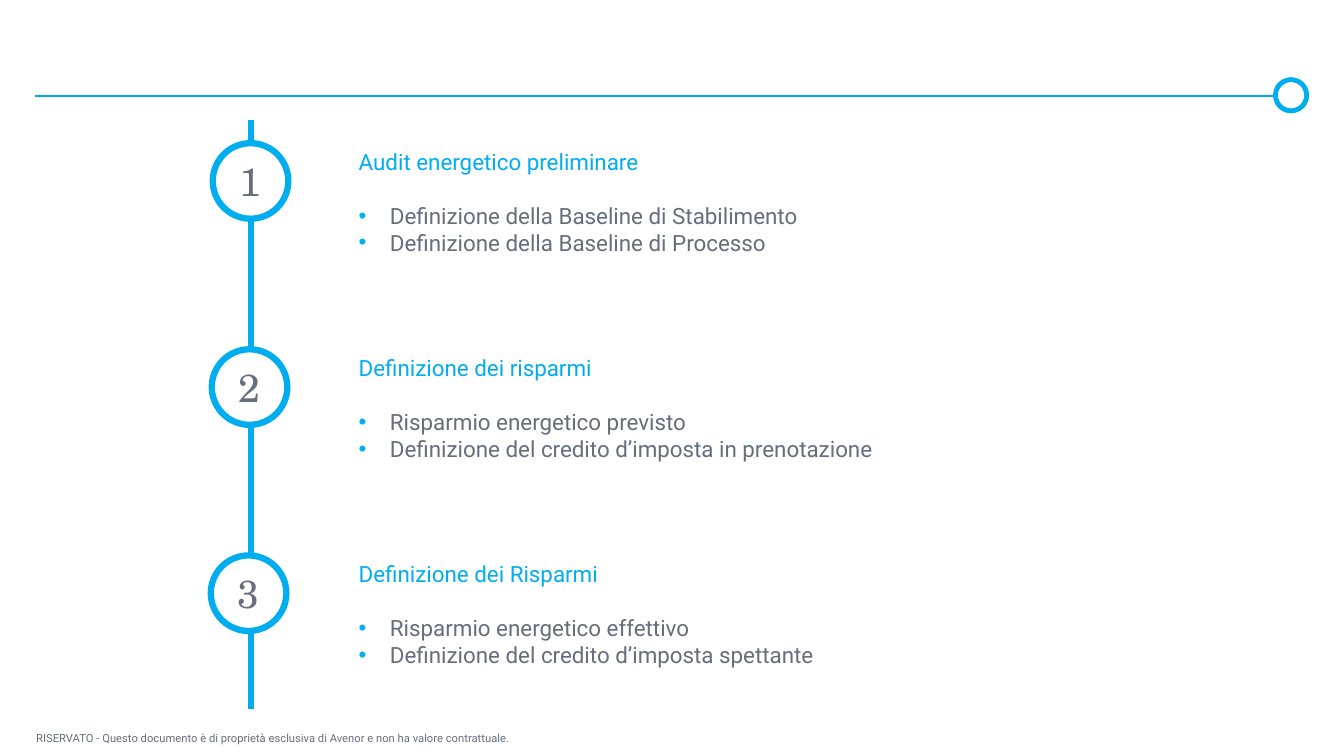
from dataclasses import dataclass

from lxml.etree import SubElement
from pptx import Presentation
from pptx.dml.color import RGBColor
from pptx.enum.shapes import MSO_CONNECTOR as CONN, MSO_SHAPE as SHAPE
from pptx.enum.text import MSO_ANCHOR as ANCHOR, MSO_AUTO_SIZE as AUTO, PP_ALIGN as ALIGN
from pptx.oxml.ns import qn
from pptx.shapes.autoshape import Shape
from pptx.slide import Slide
from pptx.text.text import TextFrame, _Paragraph as Paragraph
from pptx.util import Inches, Pt


@dataclass(frozen=True)
class Theme:
    blue: str = "00AEEF"
    bullet: str = "00B0F0"
    grey: str = "666E7E"
    white: str = "FFFFFF"
    font: str = "Roboto"
    number_font: str = "TeX Gyre Schola"
    body: float = 16
    number: float = 28
    footer: float = 8
    rule: float = 1.5
    ring: float = 3.5
    timeline: float = 4.5
    heading_gap: float = 19.3


@dataclass(frozen=True)
class Step:
    title: str
    points: tuple[str, ...]


THEME = Theme()
STEPS = (
    Step("Audit energetico preliminare",
         ("Definizione della Baseline di Stabilimento",
          "Definizione della Baseline di Processo")),
    Step("Definizione dei risparmi",
         ("Risparmio energetico previsto",
          "Definizione del credito d’imposta in prenotazione")),
    Step("Definizione dei Risparmi",
         ("Risparmio energetico effettivo",
          "Definizione del credito d’imposta spettante")),
)
FOOTER = ("RISERVATO - Questo documento è di proprietà esclusiva di Avenor "
          "e non ha valore contrattuale.")
STEP_TOP = 1.42
STEP_PITCH = 2.045
CIRCLE_LEFT = 2.11
CIRCLE_SHIFT = 0.01
CIRCLE_SIZE = 0.75


def rgb(color: str) -> RGBColor:
    return RGBColor.from_string(color)


def add_run(p: Paragraph, text: str, size: float, color: str,
            font: str = THEME.font) -> None:
    r = p.add_run()
    r.text = text
    r.font.name = font
    r.font.size = Pt(size)
    r.font.color.rgb = rgb(color)


def add_line(s: Slide, x1: float, y1: float, x2: float, y2: float,
             width: float) -> None:
    line = s.shapes.add_connector(
        CONN.STRAIGHT, Inches(x1), Inches(y1), Inches(x2), Inches(y2))
    line.line.color.rgb = rgb(THEME.blue)
    line.line.width = Pt(width)
    SubElement(line._element.spPr, qn("a:effectLst"))


def add_circle(s: Slide, x: float, y: float, size: float, width: float) -> Shape:
    sp = s.shapes.add_shape(
        SHAPE.OVAL, Inches(x), Inches(y), Inches(size), Inches(size))
    sp.shadow.inherit = False
    sp.fill.solid()
    sp.fill.fore_color.rgb = rgb(THEME.white)
    sp.line.color.rgb = rgb(THEME.blue)
    sp.line.width = Pt(width)
    return sp


def add_text_box(s: Slide, x: float, y: float, w: float, h: float) -> TextFrame:
    tf = s.shapes.add_textbox(Inches(x), Inches(y), Inches(w), Inches(h)).text_frame
    tf.word_wrap = True
    tf.auto_size = AUTO.SHAPE_TO_FIT_TEXT
    return tf


def set_bullet(p: Paragraph) -> None:
    pPr = p._p.get_or_add_pPr()
    pPr.set("marL", str(Inches(0.31)))
    pPr.set("indent", str(Inches(-0.31)))
    color = SubElement(pPr, qn("a:buClr"))
    SubElement(color, qn("a:srgbClr"), val=THEME.bullet)
    SubElement(pPr, qn("a:buFont"), typeface="Arial")
    SubElement(pPr, qn("a:buChar"), char="•")


def add_step_text(s: Slide, step: Step, y: float) -> None:
    tf = add_text_box(s, 3.46, y, 6.67, 1.18)
    add_run(tf.paragraphs[0], step.title, THEME.body, THEME.blue)
    for i, point in enumerate(step.points):
        p = tf.add_paragraph()
        p.space_before = Pt(0 if i else THEME.heading_gap)
        set_bullet(p)
        add_run(p, point, THEME.body, THEME.grey)


def add_step_number(s: Slide, number: int, x: float, y: float) -> None:
    tf = add_circle(s, x, y, CIRCLE_SIZE, THEME.timeline).text_frame
    tf.vertical_anchor = ANCHOR.MIDDLE
    p = tf.paragraphs[0]
    p.alignment = ALIGN.CENTER
    add_run(p, str(number), THEME.number, THEME.grey, THEME.number_font)


def main() -> None:
    prs = Presentation()
    prs.slide_width = Inches(13.33)
    prs.slide_height = Inches(7.5)
    s = prs.slides.add_slide(prs.slide_layouts[6])

    add_line(s, 0.35, 0.95, 12.65, 0.95, THEME.rule)
    add_circle(s, 12.65, 0.79, 0.31, THEME.ring)
    footer = add_text_box(s, 0.26, 7.21, 6.85, 0.24)
    add_run(footer.paragraphs[0], FOOTER, THEME.footer, THEME.grey)

    add_line(s, 2.49, 1.19, 2.49, 7.03, THEME.timeline)
    for i, step in enumerate(STEPS):
        y = STEP_TOP + i * STEP_PITCH
        add_step_text(s, step, y)
        add_step_number(s, i + 1, CIRCLE_LEFT - i * CIRCLE_SHIFT, y)

    prs.save("out.pptx")


if __name__ == "__main__":
    main()
